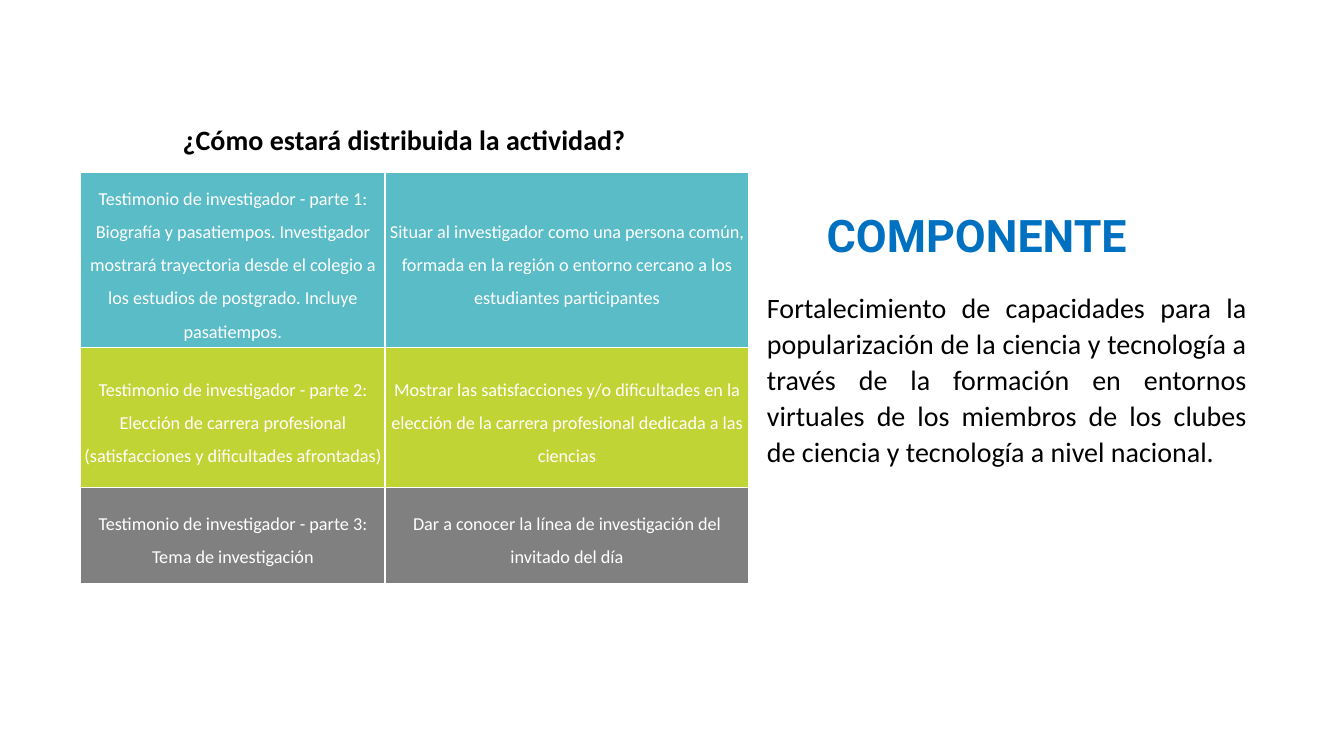
from lxml import etree
from pptx import Presentation
from pptx import util as u
from pptx.dml.color import RGBColor
from pptx.enum import text
from pptx.oxml import ns

COLORS = {"black": "000000", "white": "FFFFFF", "blue": "0070C0",
          "teal": "5ABCC6", "lime": "C0D435", "gray": "808080"}

ACTIVITIES = [
    ("teal", 4.42,
     ["Testimonio de investigador - parte 1:",
      "Biografía y pasatiempos. Investigador mostrará trayectoria desde el colegio a los estudios de postgrado. Incluye pasatiempos."],
     ["Situar al investigador como una persona común, formada en la región o entorno cercano a los estudiantes participantes"]),
    ("lime", 3.53,
     ["Testimonio de investigador - parte 2:",
      "Elección de carrera profesional (satisfacciones y dificultades afrontadas)"],
     ["Mostrar las satisfacciones y/o dificultades en la elección de la carrera profesional dedicada a las ciencias"]),
    ("gray", 2.41,
     ["Testimonio de investigador - parte 3:", "Tema de investigación"],
     ["Dar a conocer la línea de investigación del invitado del día"]),
]


class SlideBuilder:
    """Holds the text style and the current slide, and adds elements to it."""

    def __init__(self, slide, font="Calibri"):
        self.slide = slide
        self.font = font

    def style(self, paragraph, size, color, align, bold=False, font=None):
        paragraph.alignment = align
        paragraph.font.name = font or self.font
        paragraph.font.size = u.Pt(size)
        paragraph.font.bold = bold
        paragraph.font.color.rgb = RGBColor.from_string(COLORS[color])

    def text_box(self, words, box, size, color, align, inset=True, bold=False, font=None):
        shape = self.slide.shapes.add_textbox(*(u.Cm(length) for length in box))
        frame = shape.text_frame
        frame.word_wrap = True
        frame.auto_size = text.MSO_AUTO_SIZE.SHAPE_TO_FIT_TEXT
        if not inset:
            frame.margin_left = frame.margin_right = frame.margin_top = frame.margin_bottom = 0
        paragraph = frame.paragraphs[0]
        paragraph.text = words
        self.style(paragraph, size, color, align, bold, font)
        return paragraph

    def cell_borders(self, cell, color, width):
        properties = cell._tc.get_or_add_tcPr()
        for index, side in enumerate(("lnL", "lnR", "lnT", "lnB")):
            line = etree.Element(ns.qn(f"a:{side}"), w=str(u.Pt(width)))
            fill = etree.SubElement(line, ns.qn("a:solidFill"))
            etree.SubElement(fill, ns.qn("a:srgbClr"), val=COLORS[color])
            properties.insert(index, line)

    def fill_cell(self, cell, lines, color):
        cell.margin_left = cell.margin_right = cell.margin_top = cell.margin_bottom = 0
        cell.vertical_anchor = text.MSO_ANCHOR.MIDDLE
        cell.fill.solid()
        cell.fill.fore_color.rgb = RGBColor.from_string(COLORS[color])
        self.cell_borders(cell, "white", 1)
        cell.text = "\n".join(lines)
        for paragraph in cell.text_frame.paragraphs:
            paragraph.line_spacing = 1.5
            self.style(paragraph, 13, "white", text.PP_ALIGN.CENTER)

    def table(self, rows, left, top, widths):
        height = sum(row[1] for row in rows)
        table = self.slide.shapes.add_table(
            len(rows), len(widths), u.Cm(left), u.Cm(top),
            u.Cm(sum(widths)), u.Cm(height)).table
        table.first_row = table.horz_banding = False
        for column, width in zip(table.columns, widths):
            column.width = u.Cm(width)
        for row, (color, row_height, *contents) in zip(table.rows, rows):
            row.height = u.Cm(row_height)
            for cell, lines in zip(row.cells, contents):
                self.fill_cell(cell, lines, color)


def main():
    presentation = Presentation()
    presentation.slide_width = u.Cm(33.87)
    presentation.slide_height = u.Cm(19.05)
    slide = presentation.slides.add_slide(presentation.slide_layouts[6])
    builder = SlideBuilder(slide)

    description = builder.text_box(
        "Fortalecimiento de capacidades para la popularización de la ciencia y tecnología a través de la formación en entornos virtuales de los miembros de los clubes de ciencia y tecnología a nivel nacional.",
        (19.33, 7.26, 12.09, 4.52), 20, "black", text.PP_ALIGN.JUSTIFY, inset=False)
    description.line_spacing = 1.07
    description.space_after = u.Pt(8)
    builder.text_box("COMPONENTE", (20.83, 5.23, 8.36, 1.37), 32, "blue",
                     text.PP_ALIGN.JUSTIFY, inset=False, bold=True, font="Roboto")
    builder.table(ACTIVITIES, 2.03, 4.34, (7.67, 9.17))
    builder.text_box("¿Cómo estará distribuida la actividad?", (4.04, 2.97, 12.29, 1.12),
                     20, "black", text.PP_ALIGN.CENTER, bold=True)
    presentation.save("out.pptx")


if __name__ == "__main__":
    main()
